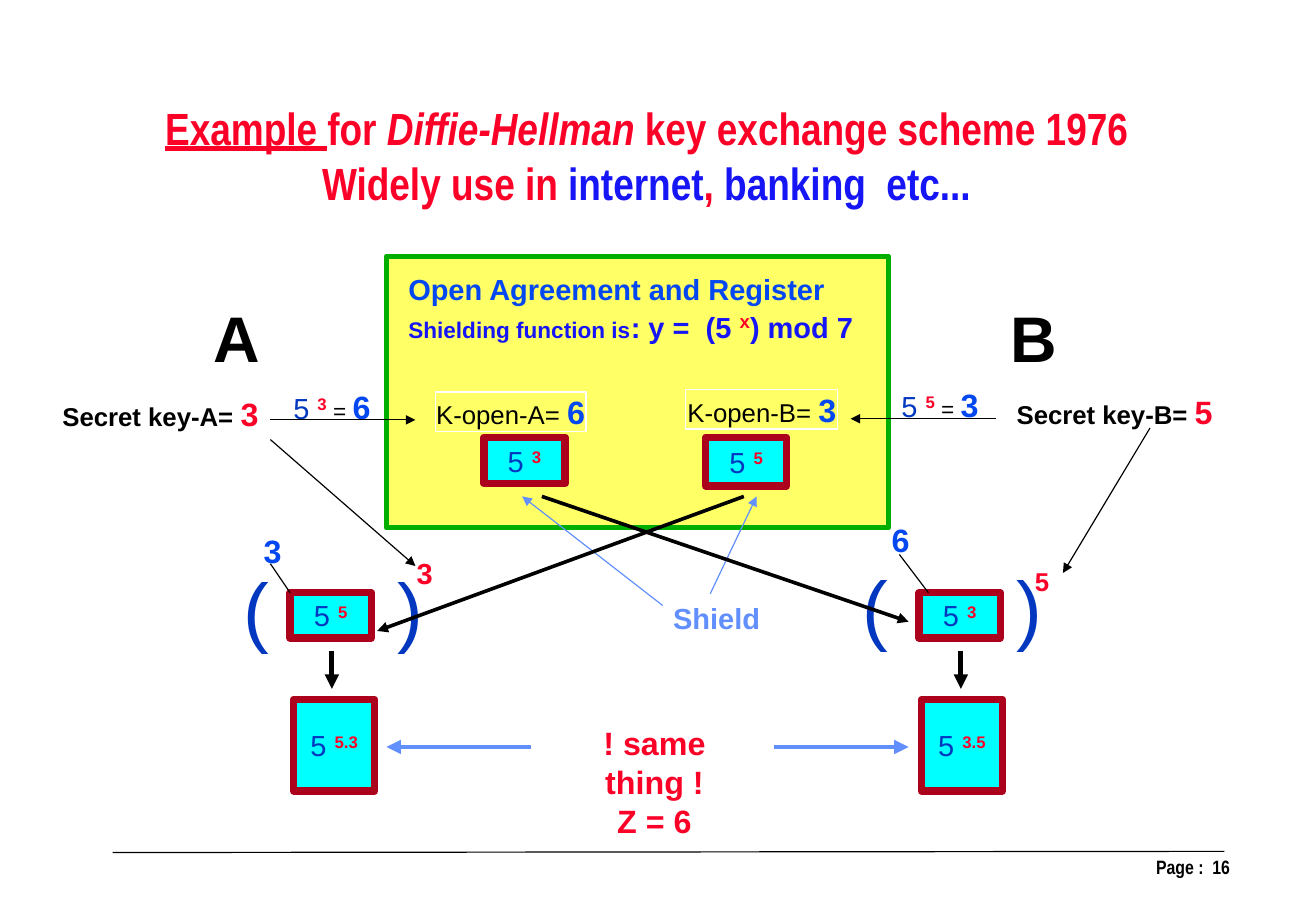
"""Build the slide that walks through a Diffie-Hellman key exchange."""
from lxml.etree import SubElement
from pptx import Presentation
from pptx.dml.color import RGBColor
from pptx.enum.shapes import MSO_CONNECTOR, MSO_SHAPE
from pptx.enum.text import MSO_ANCHOR, PP_ALIGN
from pptx.oxml.ns import qn
from pptx.util import Inches, Pt

RED, BLUE, NAVY, SKY = "FC0128", "0347F1", "0238C0", "618FFD"
VIOLET, BLACK, WHITE = "1515F5", "000000", "FFFFFF"
YELLOW, GREEN, CYAN, MAROON = "FFFF66", "00AE00", "00FFFF", "AB011D"
LEFT, CENTER, RIGHT = PP_ALIGN.LEFT, PP_ALIGN.CENTER, PP_ALIGN.RIGHT


def power(exponent):
    return [("5 ", 18, NAVY, ""), (exponent, 18, RED, "b^")]


def secret(name, value):
    return [[(f"Secret key-{name}= ", 16, BLACK, "b"), (value, 20, RED, "b")]]


def shielded(exponent, value):
    return [power(exponent) + [(" = ", 14, BLACK, ""), (value, 20, BLUE, "b")]]


def open_key(name, value):
    return [[(f"K-open-{name}= ", 16, BLACK, ""), (value, 20, BLUE, "b")]]


def label(text, size, color, style="b"):
    return [[(text, size, color, style)]]


TITLE = [
    [("Example ", 28, RED, "bu"), ("for ", 28, RED, "b"),
     ("Diffie-Hellman", 28, RED, "bi"), (" key exchange scheme 1976", 28, RED, "b")],
    [("Widely use in ", 28, RED, "b"), ("internet", 28, VIOLET, "b"),
     (", ", 28, RED, "b"), ("banking  etc...", 28, VIOLET, "b")],
]
REGISTER = [
    [("Open Agreement and Register", 18, BLUE, "b")],
    [("Shielding function is", 14, VIOLET, "b"), (": y =  (5 ", 18, VIOLET, "b"),
     ("x", 20, RED, "b^"), (") mod 7", 18, VIOLET, "b")],
]
RESULT = [[("! same thing !", 20, RED, "b")], [("Z = 6", 20, RED, "b")]]

LABELS = [
    ((1.74, 2.52, 0.6, 0.77), label("A", 40, BLACK), CENTER),
    ((8.61, 2.52, 0.6, 0.77), label("B", 40, BLACK), CENTER),
    ((5.7, 5.13, 0.95, 0.4), label("Shield", 18, SKY), CENTER),
    ((0.44, 3.35, 2.27, 0.43), secret("A", "3"), LEFT),
    ((8.66, 3.33, 1.89, 0.43), secret("B", "5"), CENTER),
    ((2.42, 3.29, 0.88, 0.43), shielded("3", "6"), CENTER),
    ((7.66, 3.27, 0.88, 0.43), shielded("5", "3"), CENTER),
    ((3.49, 4.74, 0.34, 0.4), label("3", 18, RED), CENTER),
    ((8.82, 4.83, 0.32, 0.37), label("5", 16, RED), CENTER),
    ((2.17, 4.53, 0.36, 0.43), label("3", 20, BLUE), CENTER),
    ((7.58, 4.44, 0.36, 0.43), label("6", 20, BLUE), CENTER),
]
OPEN_KEYS = [
    ((3.75, 3.38, 1.3, 0.34), open_key("A", "6")),
    ((5.91, 3.36, 1.31, 0.34), open_key("B", "3")),
]
POWERS = [
    ((4.17, 3.77, 0.7, 0.4), "3"), ((6.08, 3.77, 0.7, 0.42), "5"),
    ((2.5, 5.11, 0.7, 0.39), "5"), ((7.92, 5.11, 0.7, 0.39), "3"),
    ((2.53, 6.03, 0.7, 0.79), "5.3"), ((7.94, 6.03, 0.7, 0.79), "3.5"),
]
PARENTHESES = [(2, 4.79), (7.33, 4.77)]
PARENTHESIS_GAP = 1.33
ARROWS = [
    ((4.58, 6.44), (3.33, 6.44), SKY, 3), ((6.67, 6.44), (7.83, 6.44), SKY, 3),
    ((6.12, 5.12), (6.52, 4.28), SKY, 0.75), ((5.71, 5.22), (4.5, 4.28), SKY, 0.75),
    ((2.86, 5.61), (2.86, 5.94), BLACK, 3), ((8.28, 5.61), (8.28, 5.94), BLACK, 3),
    ((2.33, 3.62), (3.58, 3.62), BLACK, 0.75), ((8.58, 3.61), (7.33, 3.61), BLACK, 0.75),
    ((2.33, 3.79), (3.58, 4.88), BLACK, 0.75), ((9.91, 3.69), (9.16, 4.94), BLACK, 0.75),
    ((4.67, 4.28), (7.83, 5.36), BLACK, 2.25), ((6.41, 4.28), (3.25, 5.44), BLACK, 2.25),
]
RULES = [
    ((0.97, 7.35), (10.55, 7.34)), ((2.5, 5.11), (2.33, 4.86)), ((7.75, 4.78), (8, 5.11)),
]


def paint(color_format, color):
    color_format.rgb = RGBColor.from_string(color)


def style_font(font, size, color, style):
    font.size = Pt(size)
    font.bold = "b" in style
    font.italic = "i" in style
    font.underline = "u" in style
    font.fill.solid()
    paint(font.fill.fore_color, color)


def write(box, paragraphs, align=CENTER, face="Arial", inset=(0.1, 0.05), wrap=False):
    frame = box.text_frame
    frame.word_wrap = wrap
    frame.margin_left = frame.margin_right = Inches(inset[0])
    frame.margin_top = frame.margin_bottom = Inches(inset[1])
    for index, spans in enumerate(paragraphs):
        para = frame.add_paragraph() if index else frame.paragraphs[0]
        para.alignment = align
        para.font.name = face
        for text, *look in spans:
            span = para.add_run()
            span.text = text
            style_font(para.font if len(spans) == 1 else span.font, *look)
            if "^" in look[2]:
                span._r.get_or_add_rPr().set("baseline", "30000")


def add_text(page, place, paragraphs, align=CENTER, **options):
    box = page.shapes.add_textbox(*map(Inches, place))
    write(box, paragraphs, align, **options)


def add_box(page, place, fill=None, line=None, width=0.75):
    box = page.shapes.add_shape(MSO_SHAPE.RECTANGLE, *map(Inches, place))
    box.shadow.inherit = False
    box.text_frame.vertical_anchor = MSO_ANCHOR.MIDDLE
    if fill:
        box.fill.solid()
        paint(box.fill.fore_color, fill)
    else:
        box.fill.background()
    if line:
        paint(box.line.color, line)
        box.line.width = Pt(width)
    else:
        box.line.fill.background()
    return box


def add_line(page, start, end, color=BLACK, width=0.75, arrow=False):
    line = page.shapes.add_connector(MSO_CONNECTOR.STRAIGHT, *map(Inches, start + end))
    paint(line.line.color, color)
    line.line.width = Pt(width)
    if arrow:
        SubElement(line.line._get_or_add_ln(), qn("a:tailEnd"), type="triangle")
    SubElement(line._element.spPr, qn("a:effectLst"))


def main():
    deck = Presentation()
    deck.slide_width, deck.slide_height = Inches(11.34), Inches(7.88)
    page = deck.slides.add_slide(deck.slide_layouts[6])

    add_text(page, (8.14, 7.31, 2.58, 0.52), label("Page :  16", 12, BLACK), RIGHT,
             face="Arial Narrow", inset=(0.12, 0.06), wrap=True)
    add_text(page, (1.38, 0.87, 8.38, 0.94), TITLE, face="Arial Narrow", inset=(0, 0))
    add_box(page, (3.33, 2.21, 4.33, 2.34), YELLOW, GREEN, 3)
    register = add_box(page, (3.42, 2.29, 4.16, 0.7), YELLOW)
    register.text_frame.vertical_anchor = MSO_ANCHOR.TOP
    write(register, REGISTER, LEFT, wrap=True)
    add_text(page, (5.04, 6.19, 1.2, 1.1), RESULT, wrap=True)

    for place, key in OPEN_KEYS:
        write(add_box(page, place, line=WHITE), key, inset=(0, 0))
    for place, exponent in POWERS:
        write(add_box(page, place, CYAN, MAROON, 4.5), [power(exponent)])
    for left, top in PARENTHESES:
        for index, sign in enumerate("()"):
            place = (left + index * PARENTHESIS_GAP, top, 0.42, 0.9)
            add_text(page, place, label(sign, 48, NAVY, ""), LEFT)
    for place, paragraphs, align in LABELS:
        add_text(page, place, paragraphs, align, wrap=align == LEFT)
    for arrow in ARROWS:
        add_line(page, *arrow, arrow=True)
    for rule in RULES:
        add_line(page, *rule)
    deck.save("out.pptx")


if __name__ == "__main__":
    main()
